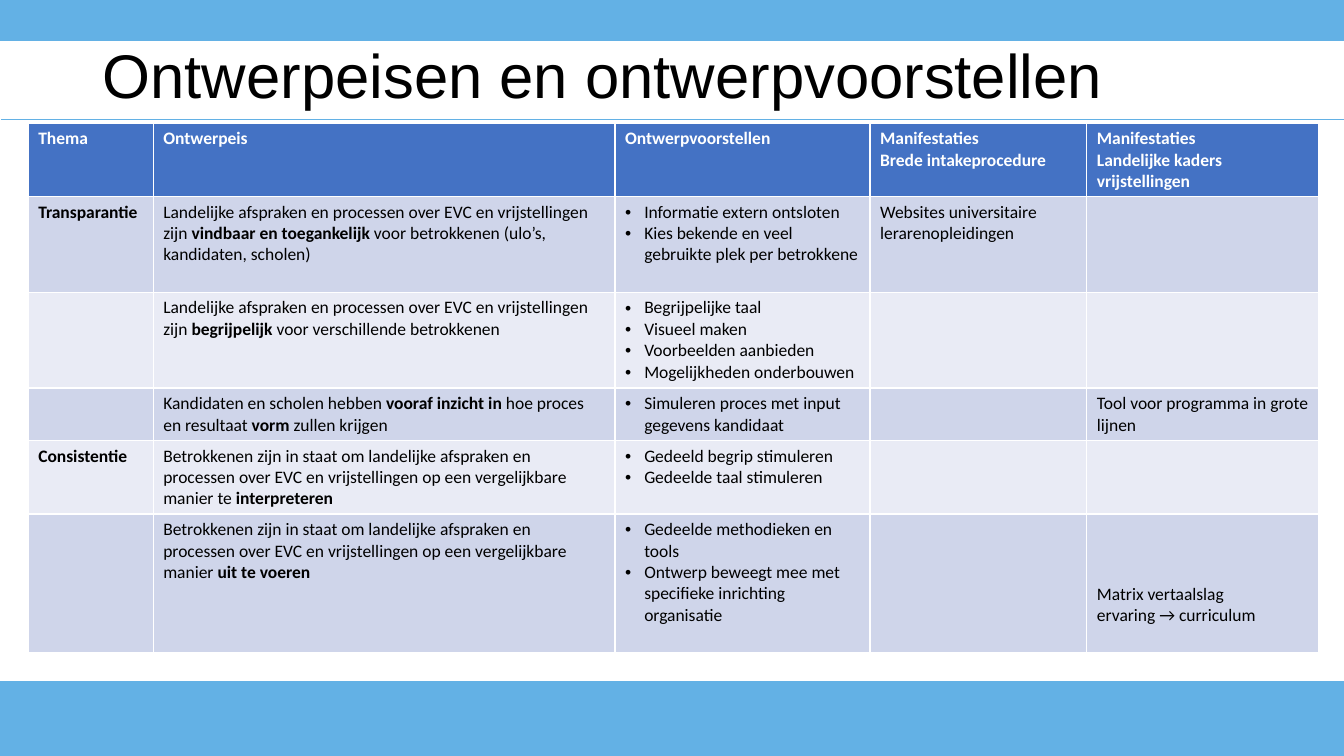
"""Build the slide with design requirements and design proposals."""
import dataclasses

import lxml.etree
import pptx
import pptx.dml.color
import pptx.enum.shapes
import pptx.enum.text
import pptx.oxml.ns
import pptx.util

Inches = pptx.util.Inches
Pt = pptx.util.Pt
Color = pptx.dml.color.RGBColor.from_string
qn = pptx.oxml.ns.qn


@dataclasses.dataclass(frozen=True)
class Theme:
    """Colours, fonts and type sizes of the slide."""
    band = Color("63B1E5")
    header = Color("4472C4")
    rows = (Color("CFD5EA"), Color("E9EBF5"))
    white = Color("FFFFFF")
    black = Color("000000")
    title_font = "Arial"
    table_font = "Calibri"
    title_size = Pt(44)
    table_size = Pt(12.5)


theme = Theme()


def style_font(font, name, size, color):
    """Set the typeface, size and colour of a font."""
    font.name = name
    font.size = size
    font.color.rgb = color


def add_bullet(paragraph):
    """Give a paragraph a round bullet with a hanging indent."""
    properties = paragraph._p.get_or_add_pPr()
    properties.set("marL", str(Inches(0.19)))
    properties.set("indent", str(Inches(-0.19)))
    bullet_font = lxml.etree.Element(qn("a:buFont"), typeface="Arial")
    bullet = lxml.etree.Element(qn("a:buChar"), char="•")
    properties.insert(0, bullet_font)
    properties.insert(1, bullet)


presentation = pptx.Presentation()
presentation.slide_width = Inches(13.33)
presentation.slide_height = Inches(7.5)
slide = presentation.slides.add_slide(presentation.slide_layouts[6])

title = slide.shapes.add_textbox(Inches(0.92), Inches(0.4), Inches(11.5), Inches(0.76))
title.text_frame.word_wrap = True
title.text_frame.vertical_anchor = pptx.enum.text.MSO_ANCHOR.MIDDLE
title_paragraph = title.text_frame.paragraphs[0]
title_paragraph.text = "Ontwerpeisen en ontwerpvoorstellen"
title_paragraph.line_spacing = 0.9
style_font(title_paragraph.font, theme.title_font, theme.title_size, theme.black)

for top, height in ((0, 0.4), (6.76, 0.74)):
    band = slide.shapes.add_shape(
        pptx.enum.shapes.MSO_SHAPE.RECTANGLE,
        Inches(0), Inches(top), presentation.slide_width, Inches(height))
    band.shadow.inherit = False
    band.fill.solid()
    band.fill.fore_color.rgb = theme.band
    band.line.color.rgb = theme.band
    band.line.width = Pt(1)

rule = slide.shapes.add_connector(
    pptx.enum.shapes.MSO_CONNECTOR.STRAIGHT,
    Inches(13.35), Inches(1.18), Inches(0.01), Inches(1.18))
rule.line.color.rgb = theme.band
rule.line.width = Pt(0.5)
lxml.etree.SubElement(rule._element.spPr, qn("a:effectLst"))

column_widths = (1.24, 4.58, 2.53, 2.15, 2.3)
row_heights = (0.73, 0.95, 0.95, 0.52, 0.73, 1.37)
proposal_column = 2

# Asterisks enclose bold words; line breaks separate paragraphs.
content = (
    ("Thema", "Ontwerpeis", "Ontwerpvoorstellen",
     "Manifestaties\nBrede intakeprocedure",
     "Manifestaties\nLandelijke kaders vrijstellingen"),
    ("*Transparantie*",
     "Landelijke afspraken en processen over EVC en vrijstellingen zijn "
     "*vindbaar en toegankelijk* voor betrokkenen (ulo’s, kandidaten, scholen)",
     "Informatie extern ontsloten\nKies bekende en veel gebruikte plek per betrokkene",
     "Websites universitaire lerarenopleidingen", ""),
    ("",
     "Landelijke afspraken en processen over EVC en vrijstellingen zijn "
     "*begrijpelijk* voor verschillende betrokkenen",
     "Begrijpelijke taal\nVisueel maken\nVoorbeelden aanbieden\nMogelijkheden onderbouwen",
     "", ""),
    ("",
     "Kandidaten en scholen hebben *vooraf inzicht in *hoe proces en resultaat "
     "*vorm* zullen krijgen",
     "Simuleren proces met input gegevens kandidaat",
     "", "Tool voor programma in grote lijnen"),
    ("*Consistentie*",
     "Betrokkenen zijn in staat om landelijke afspraken en processen over EVC en "
     "vrijstellingen op een vergelijkbare manier te *interpreteren*",
     "Gedeeld begrip stimuleren\nGedeelde taal stimuleren", "", ""),
    ("",
     "Betrokkenen zijn in staat om landelijke afspraken en processen over EVC en "
     "vrijstellingen op een vergelijkbare manier *uit te voeren*",
     "Gedeelde methodieken en tools\n"
     "Ontwerp beweegt mee met specifieke inrichting organisatie",
     "", "Matrix vertaalslag\nervaring → curriculum"),
)

table = slide.shapes.add_table(
    len(row_heights), len(column_widths), Inches(0.28), Inches(1.22),
    Inches(sum(column_widths)), Inches(sum(row_heights))).table
for column, width in zip(table.columns, column_widths):
    column.width = Inches(width)
for row, height in zip(table.rows, row_heights):
    row.height = Inches(height)

for row_index, texts in enumerate(content):
    is_header = row_index == 0
    fill_color = theme.header if is_header else theme.rows[(row_index - 1) % 2]
    text_color = theme.white if is_header else theme.black
    for column_index, text in enumerate(texts):
        cell = table.cell(row_index, column_index)
        cell.fill.solid()
        cell.fill.fore_color.rgb = fill_color
        for line_index, line in enumerate(text.split("\n")):
            frame = cell.text_frame
            paragraph = frame.add_paragraph() if line_index else frame.paragraphs[0]
            style_font(paragraph.font, theme.table_font, theme.table_size, text_color)
            if column_index == proposal_column and not is_header:
                add_bullet(paragraph)
            for part_index, part in enumerate(line.split("*")):
                if part:
                    run = paragraph.add_run()
                    run.text = part
                    run.font.bold = is_header or part_index % 2 == 1

table.cell(5, 4).margin_top = Inches(0.69)

presentation.save("out.pptx")
